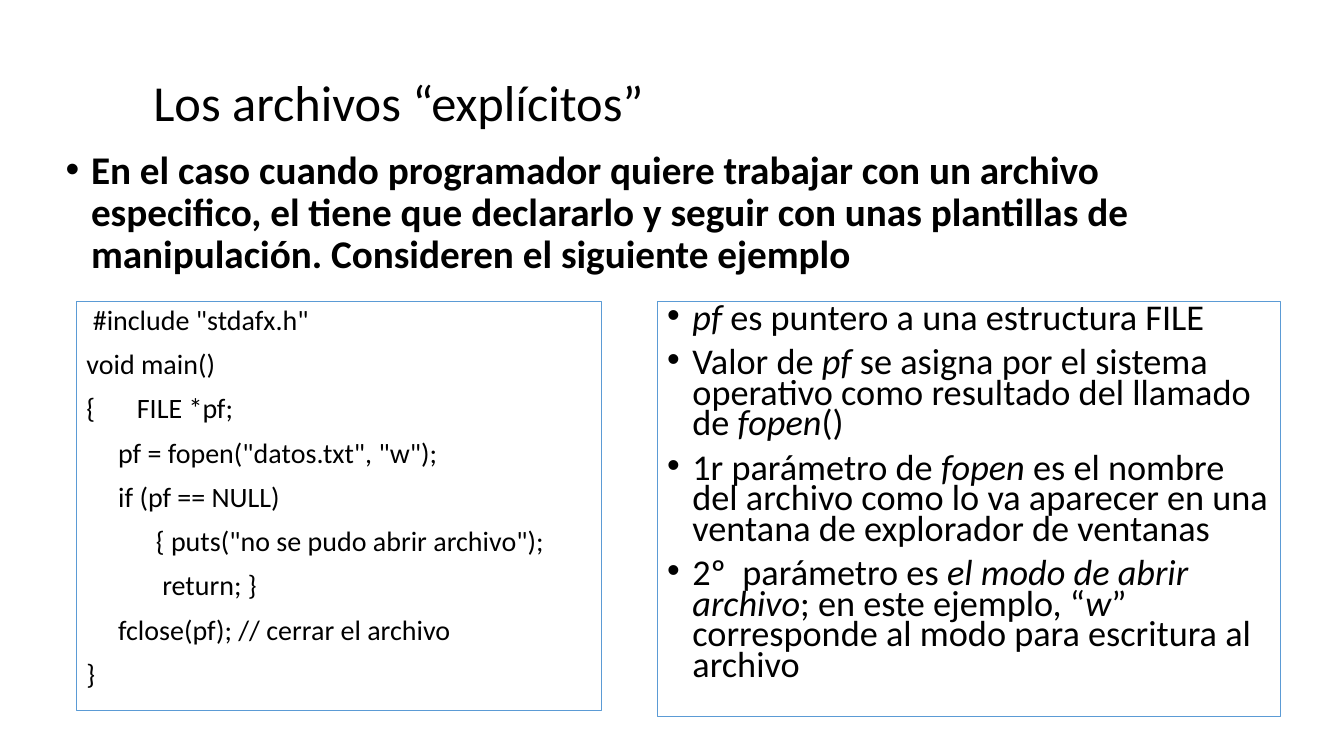
from dataclasses import dataclass

from lxml.etree import SubElement
from pptx import Presentation
from pptx.dml.color import RGBColor
from pptx.enum.shapes import MSO_SHAPE
from pptx.enum.text import MSO_ANCHOR, MSO_AUTO_SIZE, PP_ALIGN
from pptx.oxml.ns import qn
from pptx.util import Cm, Length, Pt


@dataclass(frozen=True)
class Theme:
    font: str = "Calibri"
    background: RGBColor = RGBColor(0xFF, 0xFF, 0xFF)
    text: RGBColor = RGBColor(0x00, 0x00, 0x00)
    border: RGBColor = RGBColor(0x5B, 0x9B, 0xD5)
    border_width: Length = Pt(0.75)
    title_size: Length = Pt(36)
    intro_size: Length = Pt(28)
    list_size: Length = Pt(25.9)
    code_size: Length = Pt(20)
    bullet_indent: Length = Cm(0.64)
    space_before: Length = Pt(10)


@dataclass(frozen=True)
class Area:
    left: float
    top: float
    width: float
    height: float

    def lengths(self) -> tuple[Length, ...]:
        return Cm(self.left), Cm(self.top), Cm(self.width), Cm(self.height)


@dataclass(frozen=True)
class Span:
    text: str
    italic: bool = False
    bold: bool = False


@dataclass(frozen=True)
class Line:
    spans: tuple[Span, ...]
    indent: float = 0
    tab: float = 0
    bullet: bool = False


@dataclass(frozen=True)
class Block:
    area: Area
    size: Length
    spacing: float
    lines: tuple[Line, ...]


def code(text: str, indent: float = 0, tab: float = 0) -> Line:
    return Line((Span(text),), indent, tab)


def point(*texts: str) -> Line:
    """Bulleted line whose texts alternate between upright and italic."""
    spans = (Span(text, italic=index % 2 == 1) for index, text in enumerate(texts))
    return Line(tuple(span for span in spans if span.text), bullet=True)


THEME = Theme()
PANEL_TOP = 7.59
STATEMENT_INDENT = 0.8

TITLE = Block(Area(3.61, 0.56, 29.11, 4.19), THEME.title_size, 0.9,
              (Line((Span("Los archivos “explícitos”"),)),))
INTRO = Block(Area(1.4, 3.66, 30.3, 14.38), THEME.intro_size, 0.9, (
    Line((Span("En el caso cuando programador quiere trabajar con un archivo "
               "especifico, el tiene que declararlo y seguir con unas plantillas "
               "de manipulación. Consideren el siguiente ejemplo", bold=True),),
         bullet=True),
))
CODE = Block(Area(1.93, PANEL_TOP, 13.23, 10.31), THEME.code_size, 0.9, (
    code('#include "stdafx.h"', indent=0.16),
    code("void main()"),
    code("{\tFILE *pf;", tab=0.86),
    code('pf = fopen("datos.txt", "w");', STATEMENT_INDENT),
    code("if (pf == NULL)", STATEMENT_INDENT),
    code('{ puts("no se pudo abrir archivo");', indent=1.75),
    code("return; }", indent=1.91),
    code("fclose(pf); // cerrar el archivo", STATEMENT_INDENT),
    code("}"),
))
NOTES = Block(Area(16.56, PANEL_TOP, 15.72, 10.46), THEME.list_size, 0.7, (
    point("", "pf", " es puntero a una estructura FILE"),
    point("Valor de ", "pf", " se asigna por el sistema operativo como resultado "
          "del llamado de ", "fopen", "()"),
    point("1r parámetro de ", "fopen", " es el nombre del archivo como lo va "
          "aparecer en una ventana de explorador de ventanas"),
    point("2º  parámetro es ", "el modo de abrir archivo", "; en este ejemplo, “",
          "w", "” corresponde al modo para escritura al archivo"),
))


def set_margins(paragraph, line: Line) -> None:
    """Set the indent, tab stop and bullet, which need XML."""
    properties = paragraph._p.get_or_add_pPr()
    margin = THEME.bullet_indent if line.bullet else Cm(line.indent)
    properties.set("marL", str(margin))
    properties.set("indent", str(-margin if line.bullet else 0))
    if line.bullet:
        SubElement(properties, qn("a:buFont"), typeface="Arial")
        SubElement(properties, qn("a:buChar"), char="•")
    else:
        SubElement(properties, qn("a:buNone"))
    if line.tab:
        stops = SubElement(properties, qn("a:tabLst"))
        SubElement(stops, qn("a:tab"), pos=str(Cm(line.tab)), algn="l")


def write(shape, block: Block, anchor: MSO_ANCHOR = MSO_ANCHOR.TOP) -> None:
    """Place the shape and fill it with the formatted lines of the block."""
    shape.left, shape.top, shape.width, shape.height = block.area.lengths()
    frame = shape.text_frame
    frame.word_wrap = True
    frame.auto_size = MSO_AUTO_SIZE.NONE
    frame.vertical_anchor = anchor
    for index, line in enumerate(block.lines):
        paragraph = frame.add_paragraph() if index else frame.paragraphs[0]
        paragraph.alignment = PP_ALIGN.LEFT
        paragraph.line_spacing = block.spacing
        paragraph.space_before = THEME.space_before if shape.name != "Title 1" else Pt(0)
        set_margins(paragraph, line)
        for span in line.spans:
            run = paragraph.add_run()
            run.text = span.text
            run.font.name = THEME.font
            run.font.size = block.size
            run.font.bold = span.bold
            run.font.italic = span.italic
            run.font.color.rgb = THEME.text


def add_panel(slide, block: Block) -> None:
    panel = slide.shapes.add_shape(MSO_SHAPE.RECTANGLE, *block.area.lengths())
    panel.shadow.inherit = False
    panel.fill.background()
    panel.line.color.rgb = THEME.border
    panel.line.width = THEME.border_width
    write(panel, block)


def main() -> None:
    deck = Presentation()
    deck.slide_width, deck.slide_height = Cm(33.87), Cm(19.05)
    slide = deck.slides.add_slide(deck.slide_layouts[1])
    slide.background.fill.solid()
    slide.background.fill.fore_color.rgb = THEME.background
    write(slide.shapes.title, TITLE, MSO_ANCHOR.MIDDLE)
    write(slide.placeholders[1], INTRO)
    for block in (CODE, NOTES):
        add_panel(slide, block)
    deck.save("out.pptx")


if __name__ == "__main__":
    main()
